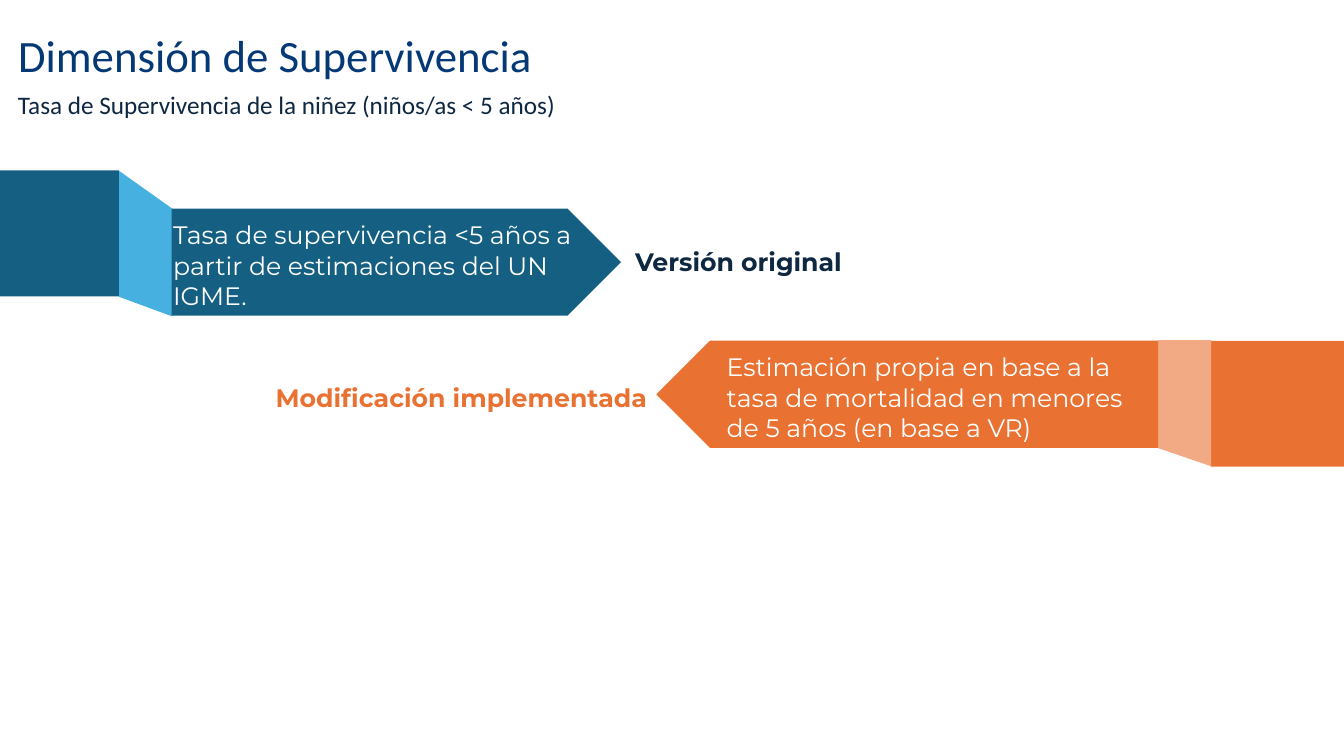
"""Build a slide comparing two versions of the child survival rate."""
from pptx import Presentation
from pptx import util as u
from pptx.dml.color import RGBColor
from pptx.enum import shapes, text

NAVY = RGBColor(0x05, 0x39, 0x76)
INK = RGBColor(0x0E, 0x28, 0x41)
TEAL = RGBColor(0x15, 0x60, 0x82)
SKY = RGBColor(0x46, 0xB1, 0xE1)
ORANGE = RGBColor(0xE9, 0x71, 0x32)
PEACH = RGBColor(0xF2, 0xAA, 0x84)
WHITE = RGBColor(0xFF, 0xFF, 0xFF)


def write(frame, words, font="Montserrat", size=18, color=WHITE, bold=False,
          align=text.PP_ALIGN.LEFT, anchor=text.MSO_ANCHOR.TOP, inset=None):
    frame.word_wrap = True
    frame.auto_size = text.MSO_AUTO_SIZE.NONE
    frame.vertical_anchor = anchor
    if inset is not None:
        frame.margin_left = frame.margin_right = u.Pt(inset)
        frame.margin_top = frame.margin_bottom = u.Pt(inset)
    para = frame.paragraphs[0]
    para.alignment = align
    span = para.add_run()
    span.text = words
    span.font.name = font
    span.font.size = u.Pt(size)
    span.font.bold = bold
    span.font.color.rgb = color


class SlideBuilder:
    def __init__(self, deck):
        self.page = deck.slides.add_slide(deck.slide_layouts[5])
        self.heading_font = "Calibri"

    def paint(self, shape, color):
        shape.shadow.inherit = False
        shape.fill.solid()
        shape.fill.fore_color.rgb = color
        shape.line.fill.background()

    def title(self, words, left, top, width, height):
        box = self.page.shapes.title
        box.left, box.top = u.Pt(left), u.Pt(top)
        box.width, box.height = u.Pt(width), u.Pt(height)
        write(box.text_frame, words, font=self.heading_font, size=32, color=NAVY)

    def text(self, words, left, top, width, height, **style):
        box = self.page.shapes.add_textbox(
            u.Pt(left), u.Pt(top), u.Pt(width), u.Pt(height))
        write(box.text_frame, words, **style)

    def label(self, words, left, top, width, **style):
        self.text(words, left, top, width, 21.6, bold=True, inset=0,
                  anchor=text.MSO_ANCHOR.MIDDLE, **style)

    def shape(self, kind, left, top, width, height, color, rotation=0):
        shape = self.page.shapes.add_shape(
            kind, u.Pt(left), u.Pt(top), u.Pt(width), u.Pt(height))
        shape.rotation = rotation
        self.paint(shape, color)

    def fold(self, points, color):
        builder = self.page.shapes.build_freeform(*points[0], scale=u.Pt(1))
        builder.add_line_segments(points[1:], close=True)
        self.paint(builder.convert_to_shape(), color)

    def ribbon(self, tail_left, tail_top, tail_edge, plate_edge, plate_top,
               tip, color, fold_color):
        tail_width, tail_height, plate_height = 96.5, 90, 76.5
        self.shape(shapes.MSO_SHAPE.RECTANGLE, tail_left, tail_top,
                   tail_width, tail_height, color)
        self.fold([(tail_edge, tail_top), (plate_edge, plate_top),
                   (plate_edge, plate_top + plate_height),
                   (tail_edge, tail_top + tail_height)], fold_color)
        self.shape(shapes.MSO_SHAPE.PENTAGON, min(plate_edge, tip), plate_top,
                   abs(tip - plate_edge), plate_height, color,
                   rotation=180 if tip < plate_edge else 0)


def main():
    deck = Presentation()
    deck.slide_width, deck.slide_height = u.Pt(960), u.Pt(540)
    slide = SlideBuilder(deck)
    slide.title("Dimensión de Supervivencia", 5.76, 15.84, 948, 98.6)
    slide.ribbon(-11.5, 121.7, 85, 122.6, 149, 443.6, TEAL, SKY)
    slide.label("Modificación implementada", 85, 273, 377.3, color=ORANGE,
                align=text.PP_ALIGN.RIGHT)
    slide.ribbon(864.8, 243.4, 864.8, 827.2, 243.4, 468.8, ORANGE, PEACH)
    slide.text("Tasa de Supervivencia de la niñez (niños/as < 5 años)",
               5.76, 60.5, 710.6, 29, font=slide.heading_font, color=INK)
    slide.text("Estimación propia en base a la tasa de mortalidad en menores "
               "de 5 años (en base a VR)", 512, 247.7, 321, 72.7)
    slide.label("Versión original", 453.6, 175.7, 354.2, color=INK)
    slide.text("Tasa de supervivencia <5 años a partir de estimaciones del "
               "UN IGME.", 116.6, 153.4, 311.8, 51)
    deck.save("out.pptx")


if __name__ == "__main__":
    main()
